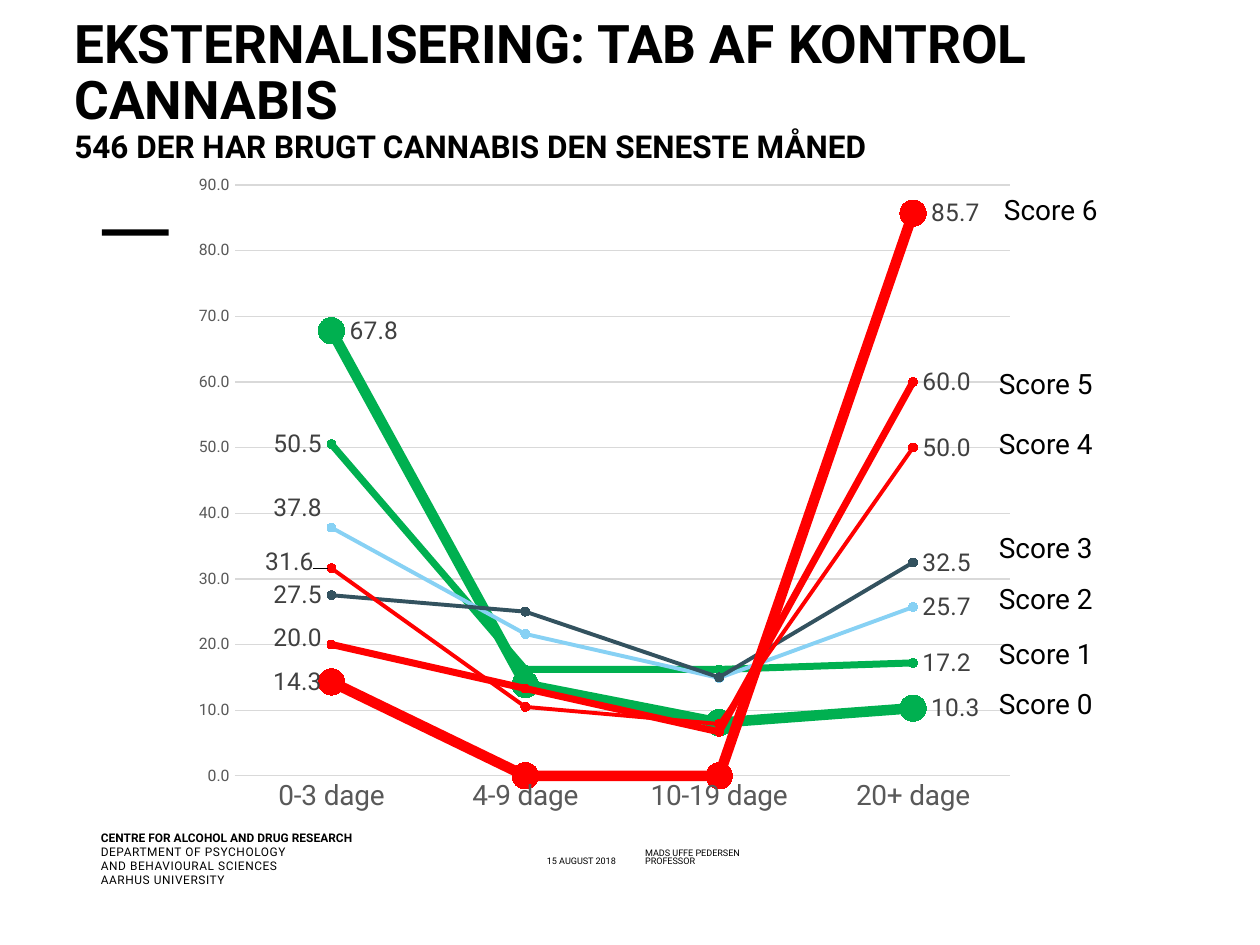
import pptx
import pptx.chart.data
import pptx.dml.color
import pptx.enum.chart
import pptx.enum.shapes
import pptx.enum.text
import pptx.oxml
import pptx.oxml.ns
import pptx.util
from pptx.util import Inches

RGBColor = pptx.dml.color.RGBColor
BLACK = RGBColor(0x00, 0x00, 0x00)
GREEN = RGBColor(0x00, 0xB0, 0x50)
SKY = RGBColor(0x87, 0xD1, 0xF4)
SLATE = RGBColor(0x33, 0x52, 0x5F)
RED = RGBColor(0xFF, 0x00, 0x00)
GRID = RGBColor(0xD9, 0xD9, 0xD9)
AXIS = RGBColor(0x59, 0x59, 0x59)
LABEL = RGBColor(0x40, 0x40, 0x40)
FONT = "Roboto"
LEFT = pptx.enum.text.PP_ALIGN.LEFT
RIGHT = pptx.enum.text.PP_ALIGN.RIGHT
POS = pptx.enum.chart.XL_LABEL_POSITION


def add_text(p, text, size=16, bold=False, color=BLACK, spacing=None):
    for i, line in enumerate(text.split("\n")):
        if i:
            p.add_line_break()
        r = p.add_run()
        r.text = line
        r.font.name = FONT
        r.font.size = pptx.util.Pt(size)
        r.font.bold = bold
        r.font.color.rgb = color
        if spacing:
            r.font._element.set("spc", str(spacing))


def layout_xml(x, y, size=None):
    ns = pptx.oxml.ns.nsdecls("c")
    modes = ""
    extent = ""
    if size:
        modes = ('<c:layoutTarget val="inner"/><c:xMode val="edge"/>'
                 '<c:yMode val="edge"/>')
        extent = f'<c:w val="{size[0]}"/><c:h val="{size[1]}"/>'
    return pptx.oxml.parse_xml(
        f'<c:layout {ns}><c:manualLayout>{modes}<c:x val="{x}"/>'
        f'<c:y val="{y}"/>{extent}</c:manualLayout></c:layout>')


prs = pptx.Presentation()
prs.slide_width = Inches(10)
prs.slide_height = Inches(7.5)
s = prs.slides.add_slide(prs.slide_layouts[5])

sp = s.shapes.add_shape(pptx.enum.shapes.MSO_SHAPE.RECTANGLE,
                        Inches(0.81), Inches(1.82), Inches(0.53), Inches(0.05))
sp.shadow.inherit = False
sp.fill.solid()
sp.fill.fore_color.rgb = BLACK
sp.line.fill.background()

footers = [
    ("MADS UFFE PEDERSEN", 5.12, 6.73, 2.45, 0.1, LEFT, dict(size=5.2)),
    ("15 AUGUST 2018", 3.03, 6.79, 1.86, 0.1, RIGHT, dict(size=5.2)),
    ("PROFESSOR", 5.12, 6.79, 2.45, 0.1, LEFT, dict(size=5.2)),
    ("DEPARTMENT OF PSYCHOLOGY\nAND BEHAVIOURAL SCIENCES\nAARHUS UNIVERSITY",
     0.8, 6.7, 1.93, 0.45, LEFT, dict(size=6.8, spacing=30)),
    ("CENTRE FOR ALCOHOL AND DRUG RESEARCH",
     0.8, 6.59, 2.01, 0.12, LEFT, dict(size=6.8, bold=True)),
]
for text, x, y, w, h, align, fmt in footers:
    tf = s.shapes.add_textbox(Inches(x), Inches(y), Inches(w), Inches(h)).text_frame
    tf.word_wrap = True
    tf.margin_left = tf.margin_top = tf.margin_right = tf.margin_bottom = 0
    tf.paragraphs[0].alignment = align
    add_text(tf.paragraphs[0], text, **fmt)

series = [
    ((67.8, 13.9, 8.1, 10.3), GREEN, 6, 15, POS.RIGHT, None),
    ((50.5, 16.2, 16.2, 17.2), GREEN, 4, 5, POS.LEFT, None),
    ((37.8, 21.6, 14.9, 25.7), SKY, 2.25, 5, POS.LEFT, (0, -0.03)),
    ((27.5, 25.0, 15.0, 32.5), SLATE, 2.25, 5, POS.LEFT, None),
    ((31.6, 10.5, 7.9, 50.0), RED, 2.25, 5, POS.LEFT, (-0.01, -0.01)),
    ((20.0, 13.3, 6.7, 60.0), RED, 4, 5, POS.LEFT, (0, -0.01)),
    ((14.3, 0.0, 0.0, 85.7), RED, 6, 15, POS.LEFT, (0.01, 0)),
]
data = pptx.chart.data.CategoryChartData(number_format="0.0")
data.categories = ["0-3 dage", "4-9 dage", "10-19 dage", "20+ dage"]
for number, row in enumerate(series, 1):
    data.add_series(f"Series {number}", row[0])
chart = s.shapes.add_chart(pptx.enum.chart.XL_CHART_TYPE.LINE_MARKERS,
                           Inches(1.46), Inches(1.31), Inches(6.69), Inches(5.27),
                           data).chart
chart.has_legend = False
chart.has_title = False
chart.font.name = FONT
chart.font.size = pptx.util.Pt(10)
chart.plots[0].vary_by_categories = False

plot_area = chart._chartSpace.chart.plotArea
for old in plot_area.findall(pptx.oxml.ns.qn("c:layout")):
    plot_area.remove(old)
plot_area.insert(0, layout_xml(0.06, 0.03, (0.92, 0.89)))

for axis, size in ((chart.category_axis, 16), (chart.value_axis, 9)):
    axis.major_tick_mark = pptx.enum.chart.XL_TICK_MARK.NONE
    axis.minor_tick_mark = pptx.enum.chart.XL_TICK_MARK.NONE
    axis.tick_labels.font.name = FONT
    axis.tick_labels.font.size = pptx.util.Pt(size)
    axis.tick_labels.font.color.rgb = AXIS
val_axis = chart.value_axis
val_axis.minimum_scale = 0
val_axis.maximum_scale = 90
val_axis.major_unit = 10
val_axis.tick_labels.number_format = "0.0"
val_axis.tick_labels.number_format_is_linked = False
val_axis.format.line.fill.background()
for line in (val_axis.major_gridlines.format.line, chart.category_axis.format.line):
    line.color.rgb = GRID
    line.width = pptx.util.Pt(0.75)

for ser, (_, color, width, marker, first_pos, offset) in zip(chart.plots[0].series, series):
    ser.smooth = False
    ser.format.line.color.rgb = color
    ser.format.line.width = pptx.util.Pt(width)
    ser.marker.style = pptx.enum.chart.XL_MARKER_STYLE.CIRCLE
    ser.marker.size = marker
    ser.marker.format.fill.solid()
    ser.marker.format.fill.fore_color.rgb = color
    ser.marker.format.line.color.rgb = color
    ser.data_labels.show_value = False
    for index, position in ((0, first_pos), (3, POS.RIGHT)):
        label = ser.points[index].data_label
        label.font.name = FONT
        label.font.size = pptx.util.Pt(14)
        label.font.color.rgb = LABEL
        label.position = position
        if index == 0 and offset:
            label._get_or_add_dLbl().insert(1, layout_xml(*offset))

scores = [(6, 7.87, 1.48), (5, 7.83, 2.86), (4, 7.83, 3.34), (0, 7.83, 5.4),
          (1, 7.83, 5.0), (2, 7.83, 4.57), (3, 7.83, 4.16)]
for score, x, y in scores:
    tf = s.shapes.add_textbox(Inches(x), Inches(y), Inches(1.5), Inches(0.37)).text_frame
    tf.word_wrap = True
    add_text(tf.paragraphs[0], f"Score {score}")

title = s.shapes.title
title.left, title.top = Inches(0.59), Inches(0.38)
title.width, title.height = Inches(8.91), Inches(0.93)
s.shapes._spTree.append(title._element)
tf = title.text_frame
tf.word_wrap = True
tf.auto_size = pptx.enum.text.MSO_AUTO_SIZE.NONE
tf.vertical_anchor = pptx.enum.text.MSO_ANCHOR.BOTTOM
tf.margin_left = tf.margin_top = tf.margin_right = tf.margin_bottom = 0
p = tf.paragraphs[0]
p.alignment = LEFT
p.line_spacing = 0.89
add_text(p, "EKSTERNALISERING: TAB AF KONTROL CANNABIS", size=30.4, bold=True)
p.add_line_break()
add_text(p, "546 DER HAR BRUGT CANNABIS DEN SENESTE MÅNED", size=18, bold=True)

prs.save("out.pptx")
